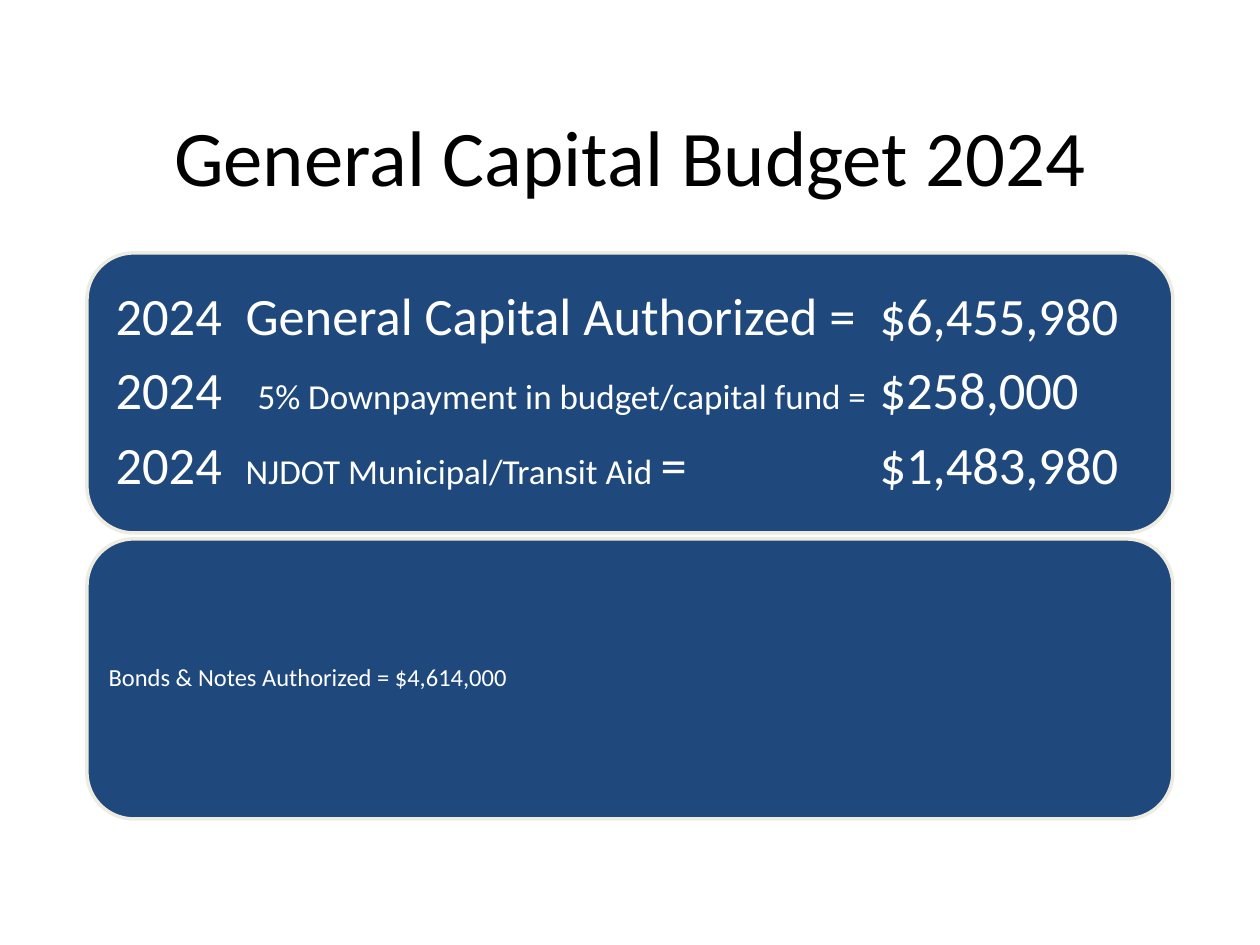
from dataclasses import dataclass

from pptx import Presentation
from pptx.dml.color import RGBColor
from pptx.enum.shapes import MSO_SHAPE as Shape
from pptx.enum.text import MSO_ANCHOR as Anchor, PP_ALIGN as Align
from pptx.oxml.ns import qn
from pptx.util import Emu, Pt
from lxml.etree import SubElement

EMU_PER_PX = 914400 // 126
NAVY = RGBColor(0x1F, 0x49, 0x7D)
CREAM = RGBColor(0xEE, 0xEC, 0xE1)
WHITE = RGBColor(0xFF, 0xFF, 0xFF)
BLACK = RGBColor(0x00, 0x00, 0x00)

LEFT, WIDTH = 87, 1086
TITLE_TOP, TITLE_HEIGHT = 77, 156
PANEL_TOP, PANEL_HEIGHT, PANEL_GAP = 253, 280, 6
AMOUNT_TAB = 764


@dataclass(frozen=True)
class Span:
    text: str
    size: int


@dataclass(frozen=True)
class Line:
    spans: tuple[Span, ...]
    tabs: tuple[int, ...] = ()


@dataclass(frozen=True)
class Panel:
    lines: tuple[Line, ...]
    inset: int
    space_after: int


PANELS = (
    Panel((
        Line((Span("2024\tGeneral Capital Authorized =\t$6,455,980", 30),),
             (130, AMOUNT_TAB)),
        Line((Span("2024\t", 30),
              Span("5% Downpayment in budget/capital fund =", 20),
              Span("\t$258,000", 30)), (142, AMOUNT_TAB)),
        Line((Span("2024\t", 30),
              Span("NJDOT Municipal/Transit Aid ", 20),
              Span("=\t$1,483,980", 30)), (130, AMOUNT_TAB)),
    ), inset=15, space_after=10),
    Panel((Line((Span("Bonds & Notes Authorized = $4,614,000", 14),)),),
          inset=8, space_after=5),
)


def px(length: int) -> Emu:
    return Emu(length * EMU_PER_PX)


def apply_format(target, values: dict) -> None:
    for name, value in values.items():
        setattr(target, name, value)


def add_span(para, span: Span, color: RGBColor) -> None:
    run = para.add_run()
    run.text = span.text
    apply_format(run.font, {"name": "Calibri", "size": Pt(span.size)})
    run.font.color.rgb = color


def add_tab_stops(para, tabs: tuple[int, ...]) -> None:
    if tabs:
        tab_list = SubElement(para._p.get_or_add_pPr(), qn("a:tabLst"))
        for tab in tabs:
            SubElement(tab_list, qn("a:tab"), pos=str(px(tab)), algn="l")


def add_title(page, text: str) -> None:
    box = page.shapes.add_textbox(px(LEFT), px(TITLE_TOP), px(WIDTH), px(TITLE_HEIGHT))
    frame = box.text_frame
    apply_format(frame, {"word_wrap": True, "vertical_anchor": Anchor.MIDDLE})
    para = frame.paragraphs[0]
    para.alignment = Align.CENTER
    add_span(para, Span(text, 45), BLACK)


def add_panel(page, panel: Panel, top: int) -> None:
    box = page.shapes.add_shape(Shape.ROUNDED_RECTANGLE, px(LEFT), px(top),
                                px(WIDTH), px(PANEL_HEIGHT))
    box.shadow.inherit = False
    box.fill.solid()
    box.fill.fore_color.rgb = NAVY
    box.line.color.rgb = CREAM
    box.line.width = Pt(2)
    frame = box.text_frame
    apply_format(frame, {"word_wrap": True, "vertical_anchor": Anchor.MIDDLE})
    apply_format(frame, {f"margin_{side}": px(panel.inset)
                         for side in ("left", "top", "right", "bottom")})
    for index, line in enumerate(panel.lines):
        para = frame.add_paragraph() if index else frame.paragraphs[0]
        apply_format(para, {"alignment": Align.LEFT, "line_spacing": 0.9,
                            "space_after": Pt(panel.space_after)})
        add_tab_stops(para, line.tabs)
        for span in line.spans:
            add_span(para, span, WHITE)


def main() -> None:
    deck = Presentation()
    apply_format(deck, {"slide_width": px(1260), "slide_height": px(945)})
    page = deck.slides.add_slide(deck.slide_layouts[6])
    add_title(page, "General Capital Budget 2024")
    for index, panel in enumerate(PANELS):
        add_panel(page, panel, PANEL_TOP + index * (PANEL_HEIGHT + PANEL_GAP))
    deck.save("out.pptx")


if __name__ == "__main__":
    main()
